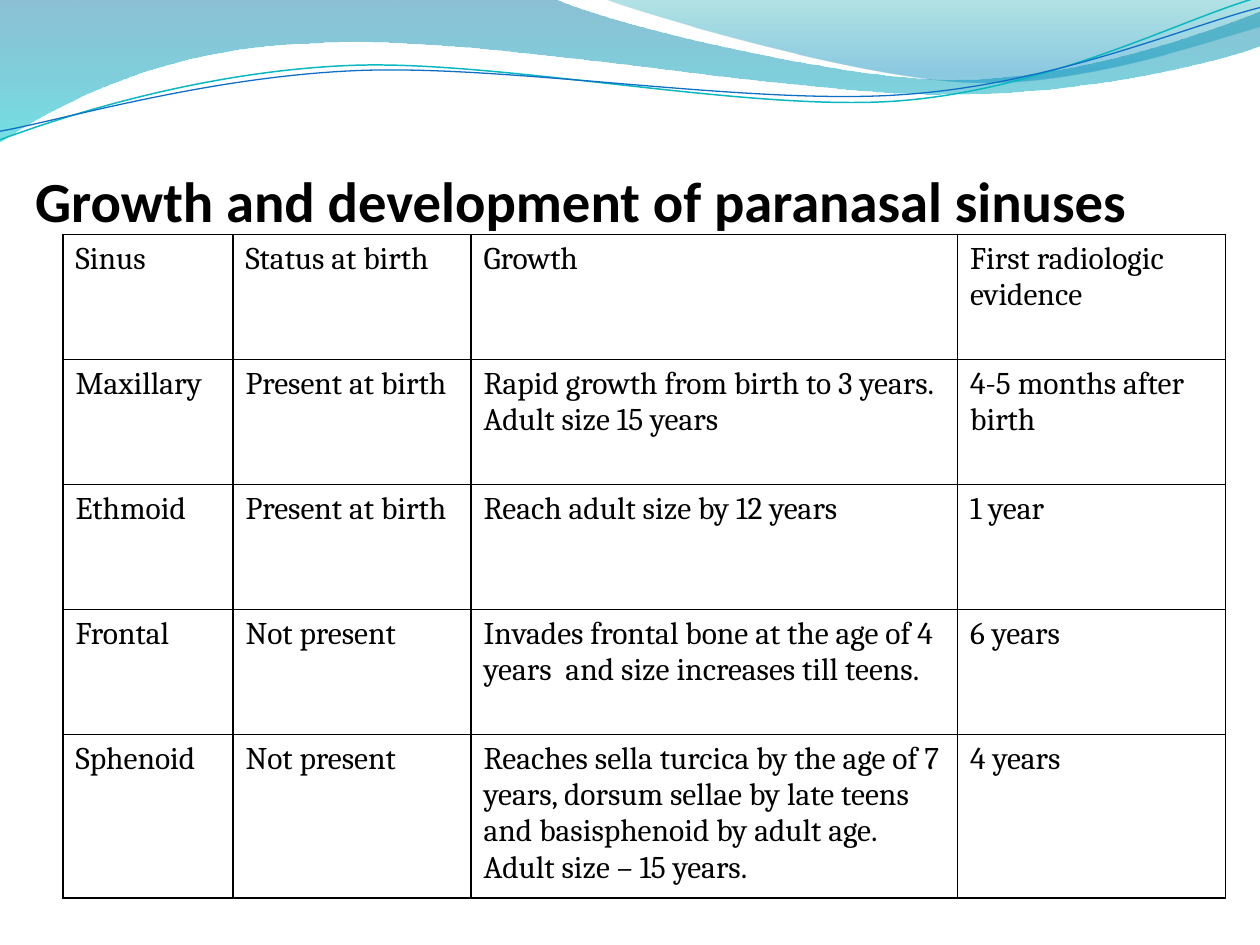
"""Builds a slide with a table on the growth of the paranasal sinuses under a wave banner."""
from pptx import Presentation
from pptx.dml.color import RGBColor
from pptx.enum.text import MSO_ANCHOR, MSO_AUTO_SIZE, PP_ALIGN
from pptx.oxml.ns import qn
from pptx.util import Pt

BOTTOM = MSO_ANCHOR.BOTTOM
LEFT = PP_ALIGN.LEFT
NO_FIT = MSO_AUTO_SIZE.NONE
COLORS = {
    "text": "000000", "border": "000000",
    "back top": "0074A1", "back bottom": "00C6CF",
    "front top": "00A1A9", "front bottom": "008BBF",
    "teal line": "0AB8BF", "blue line": "0F6FC6",
}


def color(name):
    return RGBColor.from_string(COLORS[name])


def add_wave(page, start, segments, closed):
    """Draw lines (x, y) and cubic curves (two controls and an end), in points."""
    points = [(Pt(segment[i]), Pt(segment[i + 1]))
              for segment in segments for i in range(0, len(segment), 2)]
    builder = page.shapes.build_freeform(Pt(start[0]), Pt(start[1]))
    builder.add_line_segments(points, close=closed)
    wave = builder.convert_to_shape()
    wave.shadow.inherit = False
    steps = iter(list(wave._element.iter(qn("a:lnTo"))))
    for segment in segments:
        step = next(steps)
        if len(segment) == 6:
            curve = step.makeelement(qn("a:cubicBezTo"))
            step.addprevious(curve)
            for corner in (step, next(steps), next(steps)):
                curve.append(corner[0])
                corner.getparent().remove(corner)
    return wave


deck = Presentation()
deck.slide_width, deck.slide_height = Pt(720), Pt(540)
page = deck.slides.add_slide(deck.slide_layouts[5])

bands = [
    ((0, 0), [(316.8, -0.7),
              (342.7, 12.2, 478.1, 45.4, 545.8, 45.4),
              (614.2, 45.4, 689.8, 18.7, 720, 6.5),
              (720.7, 25.9),
              (707.8, 31.7, 626.4, 54.7, 537.1, 54),
              (447.8, 54, 275, 20.2, 185, 24.5),
              (92.9, 25.9, 33.1, 59.8, -0.7, 81.4),
              (0, 0)],
     [("back top", 0, 45), ("back bottom", 1, 55)]),
    ((344.9, -0.7), [(366.5, 7.9, 491, 44.6, 553.7, 46.8),
                     (616.3, 49.7, 691.9, 23, 720, 15.1),
                     (720, 0),
                     (344.9, -0.7)],
     [("front top", 0, 30), ("front bottom", 0.8, 45)]),
]
for start, segments, stops in bands:
    band = add_wave(page, start, segments, True)
    band.line.fill.background()
    band.fill.gradient()
    band.fill.gradient_angle = 270
    for stop, (name, position, opacity) in zip(band.fill.gradient_stops, stops):
        stop.color.rgb = color(name)
        stop.position = position
    for tint, (name, position, opacity) in zip(band._element.spPr.iter(qn("a:srgbClr")), stops):
        tint.append(tint.makeelement(qn("a:alpha"), {"val": str(opacity * 1000)}))

strands = [
    ((-1.4, 62.9), [(33.8, 51.7, 114.1, 29.4, 199.8, 29.9),
                    (284.9, 30.3, 425.8, 67.3, 512.4, 64.9),
                    (599, 62.4, 676.5, 25.7, 720.2, 15.6)], "teal line", 0.85),
    ((-1.1, 58), [(32.9, 53.7, 118.3, 32.5, 204.1, 33),
                  (290.6, 33.4, 428.9, 63.8, 515.5, 61.4),
                  (601.3, 59.6, 678.4, 30.1, 721.4, 21.3)], "blue line", 0.75),
]
for start, segments, name, width in strands:
    strand = add_wave(page, start, segments, False)
    strand.rotation = 357.3
    strand.fill.background()
    strand.line.color.rgb = color(name)
    strand.line.width = Pt(width)

title = page.shapes.title
page.shapes._spTree.append(title._element)
title.left, title.top, title.width, title.height = Pt(20), Pt(55.2), Pt(680.4), Pt(78.4)
frame = title.text_frame
frame.text = "Growth and development of paranasal sinuses"
frame.auto_size = NO_FIT
frame.word_wrap = True
frame.vertical_anchor = BOTTOM
frame.margin_left = frame.margin_right = frame.margin_bottom = 0
frame.margin_top = Pt(3.6)
heading = frame.paragraphs[0]
heading.alignment = LEFT
heading.font.name, heading.font.size, heading.font.bold = "Calibri", Pt(32.4), True
heading.font.color.rgb = color("text")

rows = [
    ("Sinus", "Status at birth", "Growth", "First radiologic evidence"),
    ("Maxillary", "Present at birth",
     "Rapid growth from birth to 3 years. Adult size 15 years", "4-5 months after birth"),
    ("Ethmoid", "Present at birth", "Reach adult size by 12 years", "1 year"),
    ("Frontal", "Not present",
     "Invades frontal bone at the age of 4 years  and size increases till teens.", "6 years"),
    ("Sphenoid", "Not present",
     "Reaches sella turcica by the age of 7 years, dorsum sellae by late teens "
     "and basisphenoid by adult age. Adult size – 15 years.", "4 years"),
]
widths = [97.1, 136.1, 278, 153]
heights = [71.45] * 4 + [93.6]
table = page.shapes.add_table(len(rows), len(widths), Pt(36), Pt(133.9),
                              Pt(sum(widths)), Pt(sum(heights))).table
table.first_row = table.horz_banding = False
for column, width in zip(table.columns, widths):
    column.width = Pt(width)
for row, height, texts in zip(table.rows, heights, rows):
    row.height = Pt(height)
    for cell, text in zip(row.cells, texts):
        cell.text = text
        para = cell.text_frame.paragraphs[0]
        para.font.name, para.font.size = "Cambria", Pt(18)
        para.font.color.rgb = color("text")
        cell.fill.background()
        properties = cell._tc.get_or_add_tcPr()
        for index, side in enumerate(("a:lnL", "a:lnR", "a:lnT", "a:lnB")):
            border = properties.makeelement(qn(side), {"w": str(Pt(1))})
            paint = border.makeelement(qn("a:solidFill"))
            paint.append(paint.makeelement(qn("a:srgbClr"), {"val": COLORS["border"]}))
            border.append(paint)
            properties.insert(index, border)

deck.save("out.pptx")
